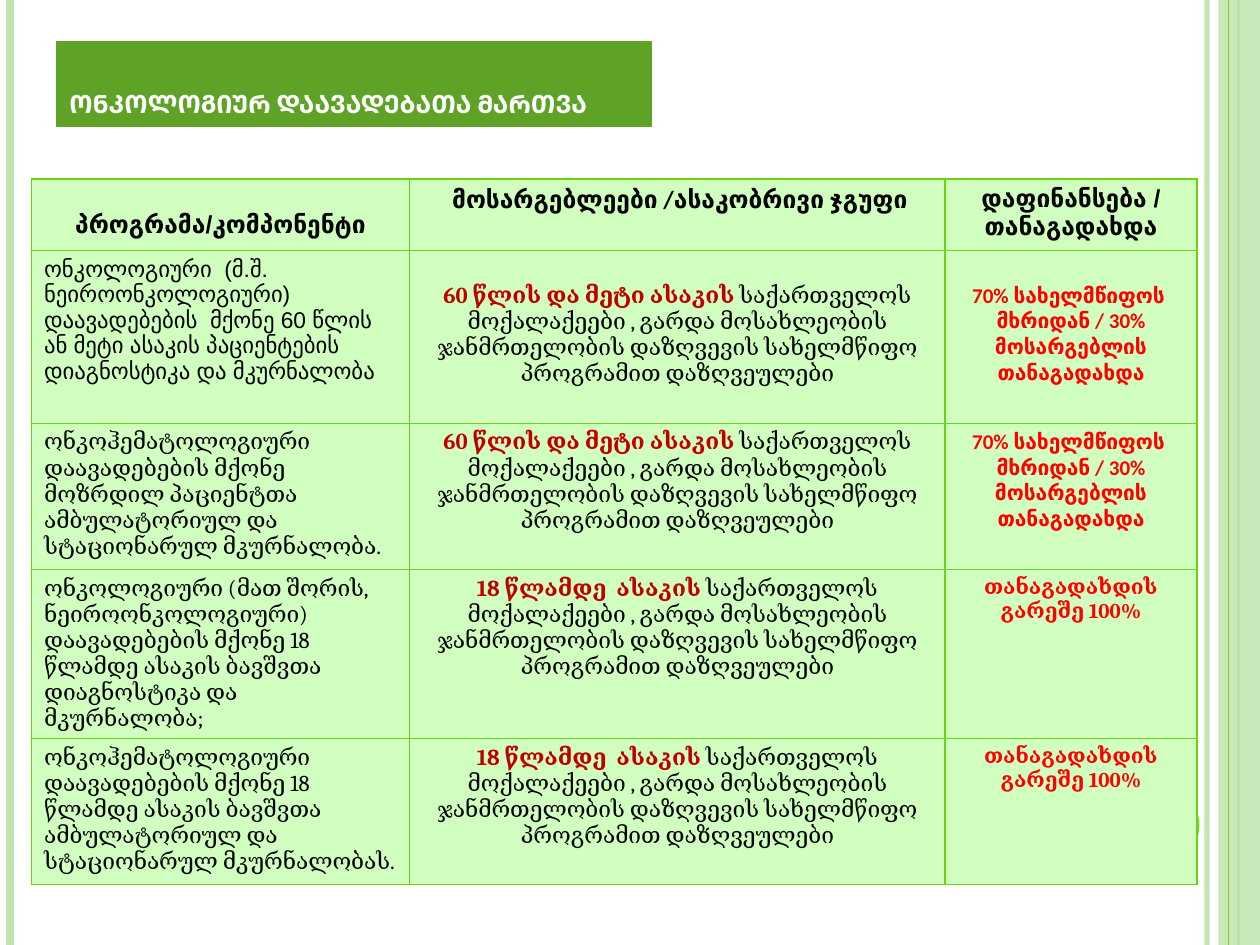
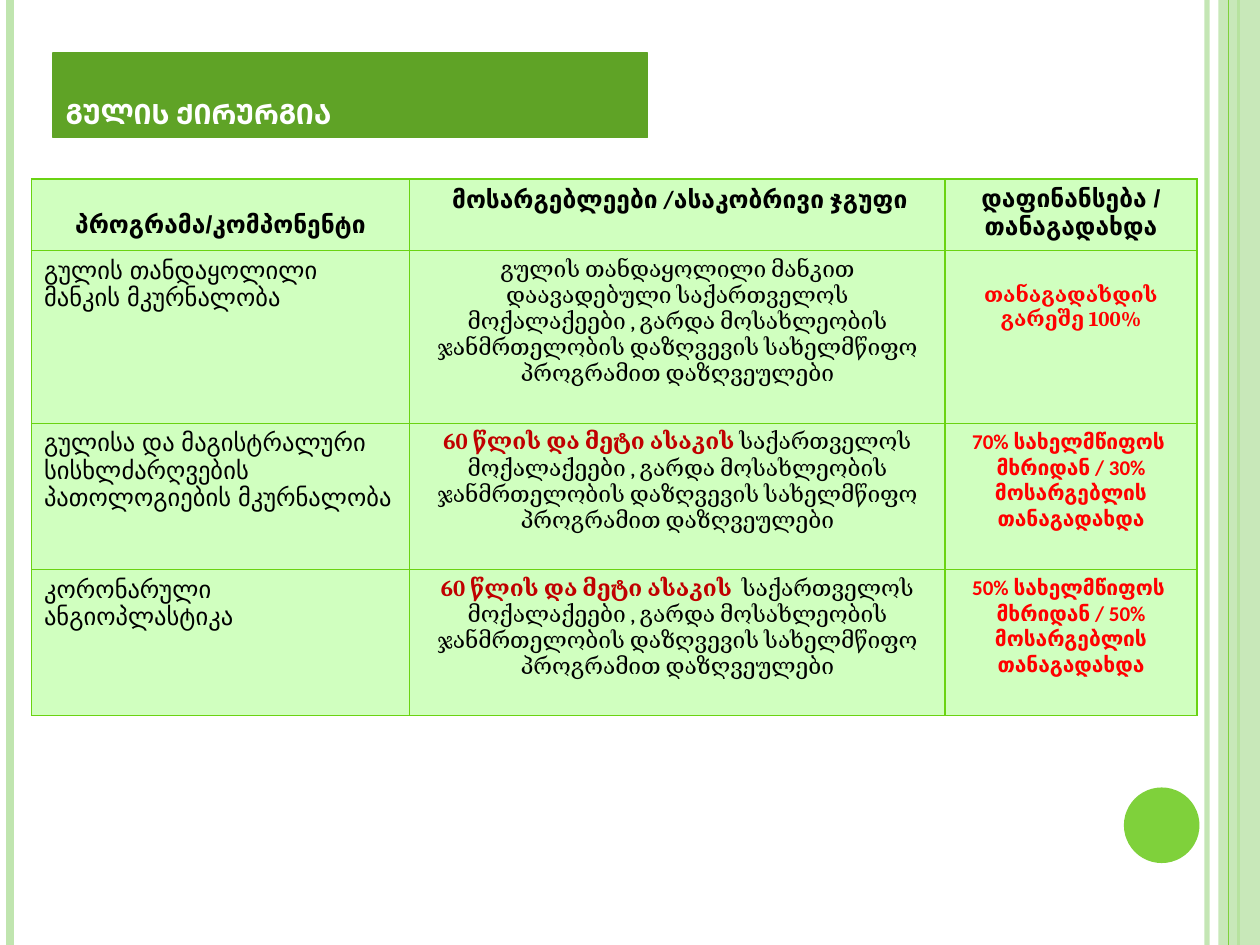
from lxml.etree import SubElement
from pptx import Presentation
from pptx.dml.color import RGBColor
from pptx.enum.shapes import MSO_CONNECTOR as Connector, MSO_SHAPE as Shape
from pptx.enum.text import MSO_ANCHOR as Anchor, MSO_AUTO_SIZE as AutoSize, PP_ALIGN as Align
from pptx.oxml.ns import qn
from pptx.util import Inches, Pt

GREEN, PALE_GREEN, TITLE_GREEN = "7FD13B", "C0E5AF", "5FA326"
CELL_GREEN, BORDER_GREEN = "D0FFBF", "6AD312"
WHITE, BLACK, RED, DARK_RED = "FFFFFF", "000000", "FF0000", "C00000"

COLUMN_WIDTHS = [3, 4.25, 2]
ROW_HEIGHTS = [0.57, 1.37, 1.16, 1.16, 1.16]
COLUMN_ALIGNS = [Align.LEFT, Align.CENTER, Align.CENTER]
TOP_MARGIN, LOWERED_MARGIN = 0.05, 0.26


def text_style(name, size, color=BLACK, bold=False):
    return {"color": color, "font": {"name": name, "size": Pt(size), "bold": bold}}


HEAD = text_style("Arial", 14, bold=True)
HEAD_CALIBRI = text_style("Calibri", 14, bold=True)
ARIAL_13 = text_style("Arial", 13)
ARIAL_14 = text_style("Arial", 14)
BODY = text_style("Cambria", 13)
AGE = text_style("Cambria", 13, DARK_RED, True)
SHARED_COST = text_style("Calibri", 12, RED, True)
FULL_COST = text_style("Cambria", 12, RED, True)

CITIZENS = ("საქართველოს მოქალაქეები , გარდა მოსახლეობის ჯანმრთელობის "
            "დაზღვევის სახელმწიფო პროგრამით დაზღვეულები")


def age_group(age):
    return [(age, AGE), (CITIZENS, BODY)]


def shared_cost(state, patient):
    return [(f"{state}% სახელმწიფოს  მხრიდან / {patient}% მოსარგებლის თანაგადახდა",
             SHARED_COST)]


SENIORS = age_group("60 წლის და მეტი ასაკის ")
CHILDREN = age_group("18 წლამდე  ასაკის ")
FREE = [("თანაგადახდის გარეშე 100%", FULL_COST)]

HEADER = [
    [("პროგრამა/კომპონენტი", HEAD)],
    [(" მოსარგებლეები /ასაკობრივი ჯგუფი", HEAD_CALIBRI)],
    [("დაფინანსება / თანაგადახდა", HEAD)],
]

PAGES = [
    {
        "title": "ონკოლოგიურ დაავადებათა მართვა",
        "size": 18,
        "box": (0.45, 0.33, 4.72, 0.67),
        "lowered": {(0, 0), (1, 1), (1, 2)},
        "rows": [
            [[("ონკოლოგიური  (მ.შ. ნეიროონკოლოგიური) დაავადებების  მქონე 60 წლის "
               "ან მეტი ასაკის პაციენტების დიაგნოსტიკა და მკურნალობა", ARIAL_13)],
             SENIORS, shared_cost(70, 30)],
            [[("ონკოჰემატოლოგიური დაავადებების მქონე მოზრდილ პაციენტთა "
               "ამბულატორიულ და სტაციონარულ მკურნალობა.", BODY)],
             SENIORS, shared_cost(70, 30)],
            [[("ონკოლოგიური (მათ შორის, ნეიროონკოლოგიური) დაავადებების მქონე 18 "
               "წლამდე ასაკის ბავშვთა დიაგნოსტიკა და მკურნალობა;", BODY)],
             CHILDREN, FREE],
            [[("ონკოჰემატოლოგიური დაავადებების მქონე 18 წლამდე ასაკის ბავშვთა "
               "ამბულატორიულ და სტაციონარულ მკურნალობას.", BODY)],
             CHILDREN, FREE],
        ],
    },
    {
        "title": "გულის ქირურგია",
        "size": 20,
        "box": (0.42, 0.42, 4.72, 0.67),
        "lowered": {(0, 0), (1, 2)},
        "rows": [
            [[("გულის თანდაყოლილი მანკის მკურნალობა", ARIAL_14)],
             [("გულის თანდაყოლილი მანკით დაავადებული " + CITIZENS, BODY)], FREE],
            [[("გულისა და მაგისტრალური სისხლძარღვების პათოლოგიების მკურნალობა",
               ARIAL_14)], SENIORS, shared_cost(70, 30)],
            [[("კორონარული ანგიოპლასტიკა", ARIAL_14)],
             age_group("60 წლის და მეტი ასაკის  "), shared_cost(50, 50)],
        ],
    },
]


def rgb(code):
    return RGBColor.from_string(code)


def set_values(target, values):
    for name, value in values.items():
        setattr(target, name, value)


def write_spans(para, spans):
    for text, style in spans:
        span = para.add_run()
        span.text = text
        set_values(span.font, style["font"])
        span.font.color.rgb = rgb(style["color"])


def set_alpha(fill_owner, percent):
    color = next(fill_owner.iter(qn("a:srgbClr")))
    SubElement(color, qn("a:alpha"), val=str(percent * 1000))


def add_stripe(page, x, height, color, width, alpha=100):
    stripe = page.shapes.add_connector(
        Connector.STRAIGHT, Inches(x), 0, Inches(x), Inches(height))
    stripe.line.color.rgb = rgb(color)
    stripe.line.width = Pt(width)
    properties = stripe.line._get_or_add_ln().getparent()
    SubElement(properties, qn("a:effectLst"))
    if alpha < 100:
        set_alpha(properties, alpha)


def add_plain_shape(page, kind, box, color):
    shape = page.shapes.add_shape(kind, *map(Inches, box))
    shape.shadow.inherit = False
    shape.fill.solid()
    shape.fill.fore_color.rgb = rgb(color)
    shape.line.fill.background()
    return shape


def add_frame(page, width, height):
    add_stripe(page, width - 0.42, height, PALE_GREEN, 3, 93)
    add_stripe(page, 0.08, height, PALE_GREEN, 4.5)
    add_stripe(page, width - 0.17, height, GREEN, 1.5)
    band = add_plain_shape(page, Shape.RECTANGLE, (width - 0.33, 0, 0.33, height), PALE_GREEN)
    set_alpha(band._element.spPr, 87)
    add_stripe(page, width - 0.25, height, GREEN, 0.75)
    add_plain_shape(page, Shape.OVAL, (width - 1.08, height - 1.25, 0.6, 0.6), GREEN)


def format_title(page, text, size, box):
    title = page.shapes.title
    set_values(title, dict(zip(("left", "top", "width", "height"), map(Inches, box))))
    title.fill.solid()
    title.fill.fore_color.rgb = rgb(TITLE_GREEN)
    title.line.color.rgb = rgb(TITLE_GREEN)
    title.line.width = Pt(0.75)
    set_values(title.text_frame, {"vertical_anchor": Anchor.BOTTOM, "word_wrap": True,
                                  "auto_size": AutoSize.NONE})
    para = title.text_frame.paragraphs[0]
    para.alignment = Align.LEFT
    write_spans(para, [(text, text_style("Cambria", size, WHITE, True))])
    para.runs[0]._r.get_or_add_rPr().set("cap", "small")


def add_borders(cell):
    properties = cell._tc.get_or_add_tcPr()
    for side in ("lnL", "lnR", "lnT", "lnB"):
        line = SubElement(properties, qn(f"a:{side}"), w=str(Pt(1)))
        fill = SubElement(line, qn("a:solidFill"))
        SubElement(fill, qn("a:srgbClr"), val=BORDER_GREEN)


def fill_cell(cell, spans, align, lowered):
    add_borders(cell)
    cell.fill.solid()
    cell.fill.fore_color.rgb = rgb(CELL_GREEN)
    cell.margin_top = Inches(LOWERED_MARGIN if lowered else TOP_MARGIN)
    para = cell.text_frame.paragraphs[0]
    para.alignment = align
    write_spans(para, spans)


def add_program_table(page, left, top, rows, lowered):
    heights = ROW_HEIGHTS[:len(rows)]
    size = (left, top, sum(COLUMN_WIDTHS), sum(heights))
    table = page.shapes.add_table(len(rows), len(COLUMN_WIDTHS), *map(Inches, size)).table
    set_values(table, {"first_row": False, "horz_banding": False})
    for column, width in zip(table.columns, COLUMN_WIDTHS):
        column.width = Inches(width)
    for r, (row, height) in enumerate(zip(rows, heights)):
        table.rows[r].height = Inches(height)
        for c, spans in enumerate(row):
            align = COLUMN_ALIGNS[c] if r else Align.CENTER
            fill_cell(table.cell(r, c), spans, align, (r, c) in lowered)


def main():
    deck = Presentation()
    width, height = 10, 7.5
    deck.slide_width, deck.slide_height = Inches(width), Inches(height)
    for content in PAGES:
        page = deck.slides.add_slide(deck.slide_layouts.get_by_name("Title Only"))
        add_frame(page, width, height)
        format_title(page, content["title"], content["size"], content["box"])
        add_program_table(page, 0.25, 1.42, [HEADER] + content["rows"], content["lowered"])
    deck.save("out.pptx")


if __name__ == "__main__":
    main()
